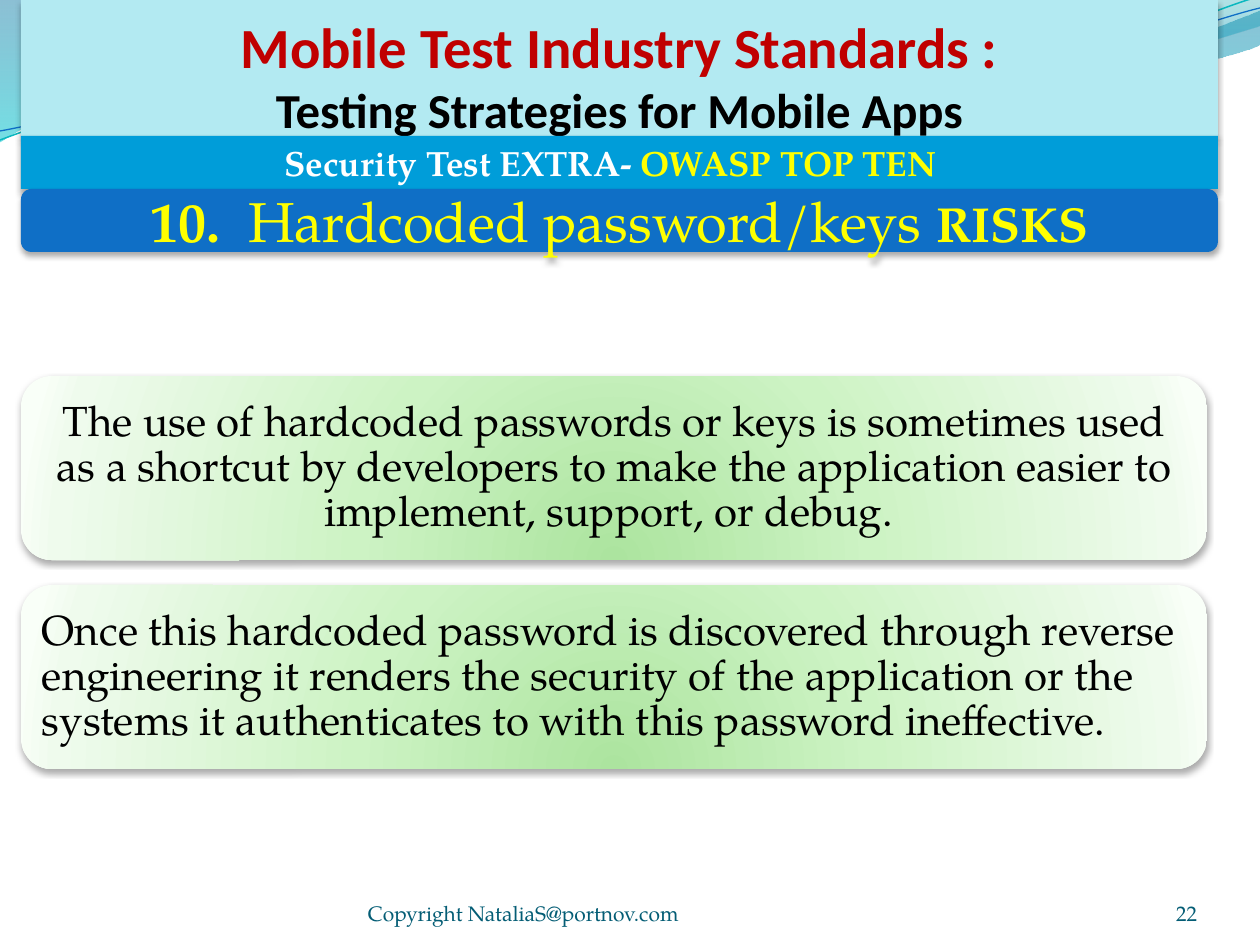
from lxml import etree
from pptx import Presentation
from pptx.dml.color import RGBColor
from pptx.enum.shapes import MSO_SHAPE as Kind
from pptx.enum.text import MSO_ANCHOR as Anchor, PP_ALIGN as Align
from pptx.oxml import parse_xml
from pptx.oxml.ns import qn
from pptx.util import Emu, Pt

RED = RGBColor(0xC0, 0x00, 0x00)
BLACK = RGBColor(0x00, 0x00, 0x00)
WHITE = RGBColor(0xFF, 0xFF, 0xFF)
YELLOW = RGBColor(0xFF, 0xFF, 0x00)
PALE = RGBColor(0xB3, 0xEA, 0xF2)
SKY = RGBColor(0x00, 0x9D, 0xD9)
BLUE = RGBColor(0x0F, 0x6F, 0xC6)
AQUA = RGBColor(0x0A, 0xB8, 0xBF)
TEAL = RGBColor(0x04, 0x5D, 0x75)
DEEP = RGBColor(0x00, 0x74, 0xA1)
CYAN = RGBColor(0x00, 0xC6, 0xCF)
LAGOON = RGBColor(0x00, 0xA1, 0xA9)
OCEAN = RGBColor(0x00, 0x8B, 0xBF)
GREENS = [RGBColor(0xAC, 0xE4, 0x9F), RGBColor(0xCD, 0xF3, 0xC4),
          RGBColor(0xEF, 0xFB, 0xED), RGBColor(0xF9, 0xFF, 0xF8)]

SANS, SERIF = "Calibri", "TeX Gyre Pagella"
WIDE, HIGH, LEFT = 1260, 945, 21
SCALE = 914400 / 126
NS = "http://schemas.openxmlformats.org/drawingml/2006/main"

DOWN = '<a:lin ang="5400000" scaled="0"/>'
GLOW = ('<a:path path="circle"><a:fillToRect l="50000" t="130000" '
        'r="50000" b="-30000"/></a:path>')
CARD_STOPS = [(pos, tone, 100) for pos, tone in zip((0, 43, 93, 100), GREENS)]

WAVES = [
    ([(0, 0), (554, -1), (600, 21, 837, 79, 955, 79), (1075, 79, 1207, 33, 1260, 11),
      (1261, 45), (1239, 55, 1096, 96, 940, 95), (784, 95, 481, 35, 324, 43),
      (163, 45, 58, 105, -1, 142)], [(0, DEEP, 45), (100, CYAN, 55)]),
    ([(604, -1), (641, 14, 859, 78, 969, 82), (1079, 87, 1211, 40, 1260, 26),
      (1260, 0)], [(0, LAGOON, 30), (80, OCEAN, 45)]),
]
STROKES = [
    ([(0, 140), (60, 117, 199, 72, 349, 66), (498, 59, 747, 112, 898, 101),
      (1050, 89, 1182, 19, 1257, -3)], AQUA, 0.85),
    ([(0, 131), (59, 121, 207, 77, 357, 71), (508, 64, 752, 106, 903, 95),
      (1053, 84, 1186, 26, 1260, 8)], BLUE, 0.75),
]

TITLE = [[("Mobile Test Industry Standards :", 32.4, RED, True)],
         [("Testing Strategies for Mobile Apps", 27.9, BLACK, True)]]
TOPIC = [[("Security Test EXTRA-", 20, WHITE, True),
          (" OWASP TOP TEN", 20, YELLOW, True)]]
RISK = [[("10.", 32, YELLOW, True), (" ", 32, YELLOW, True, 8),
         ("Hardcoded password/keys ", 32, YELLOW, False), ("RISKS", 28, YELLOW, True)]]
BANDS = [
    (Kind.RECTANGLE, 136, PALE, TITLE, SANS, Anchor.TOP, (0, 12, 0, 0)),
    (Kind.RECTANGLE, 53, SKY, TOPIC, SERIF, Anchor.MIDDLE, (13, 6, 31, 6)),
    (Kind.ROUNDED_RECTANGLE, 63, BLUE, RISK, SERIF, Anchor.MIDDLE, (13, 6, 13, 6)),
]
CARDS = [
    ("The use of hardcoded passwords or keys is sometimes used as a shortcut by "
     "developers to make the application easier to implement, support, or debug. ",
     Align.CENTER),
    ("Once this hardcoded password is discovered through reverse engineering it "
     "renders the security of the application or the systems it authenticates to "
     "with this password ineffective.", Align.LEFT),
]
NOTES = [("22", 1092, 105, Align.RIGHT),
         ("Copyright NataliaS@portnov.com", 368, 462, Align.LEFT)]


def px(n):
    return Emu(round(n * SCALE))


def blend(shape, stops, shade):
    marks = "".join(
        f'<a:gs pos="{pos * 1000}"><a:srgbClr val="{tone}">'
        f'<a:alpha val="{alpha * 1000}"/></a:srgbClr></a:gs>'
        for pos, tone, alpha in stops)
    shape.fill.background()
    old = shape._element.spPr.find(qn("a:noFill"))
    old.getparent().replace(old, parse_xml(
        f'<a:gradFill xmlns:a="{NS}" rotWithShape="1"><a:gsLst>{marks}</a:gsLst>'
        f'{shade}</a:gradFill>'))


def shade_under(shape):
    shape.shadow.inherit = False
    glow = etree.SubElement(
        shape._element.spPr.find(qn("a:effectLst")), qn("a:outerShdw"),
        blurRad=str(Pt(3.5)), dist=str(Pt(2.2)), dir="5400000", rotWithShape="0")
    tone = etree.SubElement(glow, qn("a:srgbClr"), val=str(BLACK))
    etree.SubElement(tone, qn("a:alpha"), val="32000")


def curve(slide, knots, close):
    ends = [(px(knot[-2]), px(knot[-1])) for knot in knots]
    pen = slide.shapes.build_freeform(*ends[0])
    pen.add_line_segments(ends[1:], close=close)
    shape = pen.convert_to_shape()
    shape.shadow.inherit = False
    legs = list(shape._element.spPr.iter(qn("a:lnTo")))
    for leg, knot in zip(legs, knots[1:]):
        if len(knot) == 6:
            bend = etree.Element(qn("a:cubicBezTo"))
            for x, y in zip(knot[::2], knot[1::2]):
                etree.SubElement(bend, qn("a:pt"), x=str(px(x) - shape.left),
                                 y=str(px(y) - shape.top))
            leg.getparent().replace(leg, bend)
    return shape


def write(shape, paras, face, align, anchor, pads, pitch=None):
    frame = shape.text_frame
    frame.word_wrap = True
    frame.vertical_anchor = anchor
    (frame.margin_left, frame.margin_top,
     frame.margin_right, frame.margin_bottom) = map(px, pads)
    for i, runs in enumerate(paras):
        para = frame.add_paragraph() if i else frame.paragraphs[0]
        para.alignment = align
        para.line_spacing = pitch
        for text, size, tone, bold, *gap in runs:
            run = para.add_run()
            run.text = text
            font = run.font
            font.name, font.size, font.bold = face, Pt(size), bold
            font.color.rgb = tone
            if gap:
                run._r.get_or_add_rPr().set("spc", str(gap[0] * 100))


def block(slide, kind, *box):
    shape = slide.shapes.add_shape(kind, *map(px, box))
    shape.line.fill.background()
    shade_under(shape)
    return shape


def main():
    """Build the slide on hardcoded password risks."""
    deck = Presentation()
    deck.slide_width, deck.slide_height = px(WIDE), px(HIGH)
    slide = deck.slides.add_slide(deck.slide_layouts[6])

    for knots, stops in WAVES:
        wave = curve(slide, knots, True)
        wave.line.fill.background()
        blend(wave, stops, DOWN)
    for knots, tone, width in STROKES:
        stroke = curve(slide, knots, False)
        stroke.fill.background()
        stroke.line.color.rgb = tone
        stroke.line.width = Pt(width)

    top = 0
    for kind, high, tone, paras, face, anchor, pads in BANDS:
        band = block(slide, kind, LEFT, top, 1197, high)
        band.fill.solid()
        band.fill.fore_color.rgb = tone
        write(band, paras, face, Align.CENTER, anchor, pads)
        top += high

    for i, (text, align) in enumerate(CARDS):
        card = block(slide, Kind.ROUNDED_RECTANGLE, LEFT, 376 + 209 * i, 1186, 184)
        blend(card, CARD_STOPS, GLOW)
        write(card, [[(text, 24, BLACK, False)]], SERIF, align, Anchor.MIDDLE,
              (12, 12, 12, 12), 0.9)

    for text, left, wide, align in NOTES:
        note = slide.shapes.add_textbox(*map(px, (left, 876, wide, 50)))
        write(note, [[(text, 12, TEAL, False)]], SERIF, align, Anchor.BOTTOM, (0, 0, 0, 0))

    deck.save("out.pptx")


if __name__ == "__main__":
    main()
